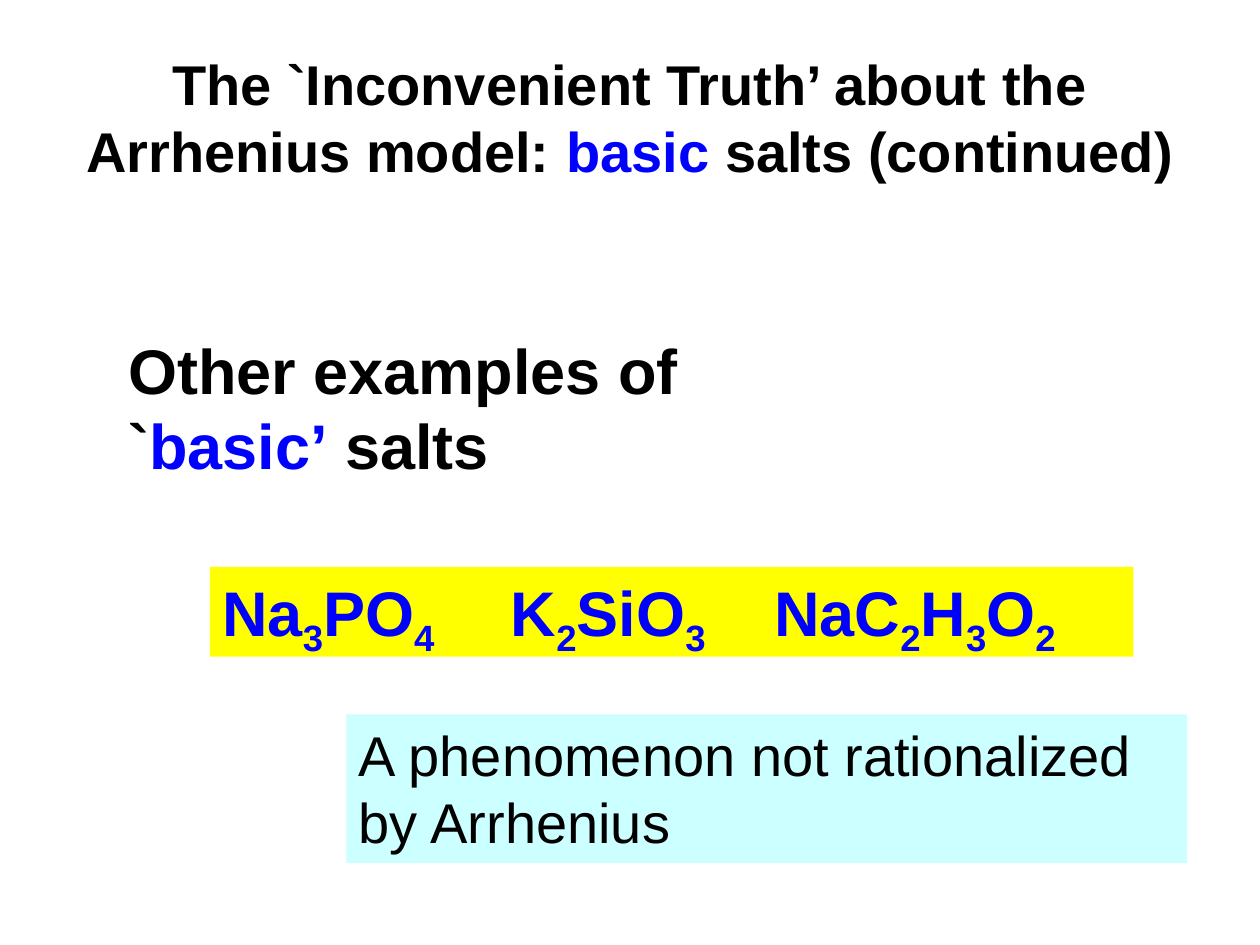
from lxml.etree import SubElement
from pptx import Presentation
from pptx.dml.color import RGBColor
from pptx.enum.shapes import MSO_SHAPE as SHAPE
from pptx.enum.text import MSO_ANCHOR as ANCHOR, PP_ALIGN as ALIGN
from pptx.oxml.ns import qn
from pptx.util import Inches, Pt

W, H = 10, 7.5
BLACK, BLUE, YELLOW, CYAN = "000000", "0000FF", "FFFF00", "CCFFFF"

# Content: (text, colour) runs
TITLE = [("The `Inconvenient Truth’ about the Arrhenius model: ", BLACK),
         ("basic ", BLUE), ("salts (continued)", BLACK)]
LEAD = [("Other examples of `", BLACK), ("basic’", BLUE), (" salts", BLACK)]
NOTE = [("A phenomenon not rationalized by Arrhenius", BLACK)]
SALTS = ["Na3PO4", "K2SiO3", "NaC2H3O2"]
SALT_TABS = [2.29, 4.38]

# Places as shares of the slide: left, top, width, height
TITLE_BOX = (0.05, 0.04, 0.9, 1 / 6)
LEAD_BOX = (0.092, 0.344, 0.508, 0.175)
SALTS_BOX = (1 / 6, 0.6, 0.733, 0.095)
NOTE_BOX = (0.275, 0.756, 0.667, 0.157)


def rgb(value):
    return RGBColor.from_string(value)


def add_box(slide, box, runs, size, bold=True, fill=None):
    """Add a text block, filled if a colour is given; digits in blue are not special."""
    x, y, w, h = box
    place = [Inches(v) for v in (x * W, y * H, w * W, h * H)]
    if fill:
        s = slide.shapes.add_shape(SHAPE.RECTANGLE, *place)
        s.shadow.inherit = False
        s.fill.solid()
        s.fill.fore_color.rgb = rgb(fill)
        s.line.fill.background()
    else:
        s = slide.shapes.add_textbox(*place)
    tf = s.text_frame
    tf.word_wrap = True
    tf.vertical_anchor = ANCHOR.TOP
    p = tf.paragraphs[0]
    p.alignment = ALIGN.LEFT
    for text, color in runs:
        r = p.add_run()
        r.text = text
        r.font.name, r.font.size, r.font.bold = "Arial", Pt(size), bold
        r.font.color.rgb = rgb(color)
    return s


def space_before(p, percent):
    gap = SubElement(p._p.get_or_add_pPr(), qn("a:spcBef"))
    SubElement(gap, qn("a:spcPct"), val=str(percent * 1000))


def set_tabs(p, stops):
    tabs = SubElement(p._p.get_or_add_pPr(), qn("a:tabLst"))
    for stop in stops:
        SubElement(tabs, qn("a:tab"), pos=str(Inches(stop)), algn="l")


def formula_runs(salts):
    """Split tabbed formulas so that every digit is a run of its own."""
    parts = [""]
    for ch in "\t".join(salts):
        if ch.isdigit():
            parts += [ch, ""]
        else:
            parts[-1] += ch
    return [(part, BLUE) for part in parts if part]


prs = Presentation()
prs.slide_width, prs.slide_height = Inches(W), Inches(H)
slide = prs.slides.add_slide(prs.slide_layouts[6])

# Title
title = add_box(slide, TITLE_BOX, TITLE, 32)
title.text_frame.vertical_anchor = ANCHOR.MIDDLE
title.text_frame.paragraphs[0].alignment = ALIGN.CENTER

# Body blocks
lead = add_box(slide, LEAD_BOX, LEAD, 36)
salts = add_box(slide, SALTS_BOX, formula_runs(SALTS), 36, fill=YELLOW)
note = add_box(slide, NOTE_BOX, NOTE, 32, bold=False, fill=CYAN)
for s in (lead, salts, note):
    space_before(s.text_frame.paragraphs[0], 50)

# Formula columns and subscripts
p = salts.text_frame.paragraphs[0]
set_tabs(p, SALT_TABS)
for r in p.runs:
    if r.text.isdigit():
        r.font._element.set("baseline", "-25000")

prs.save("out.pptx")
